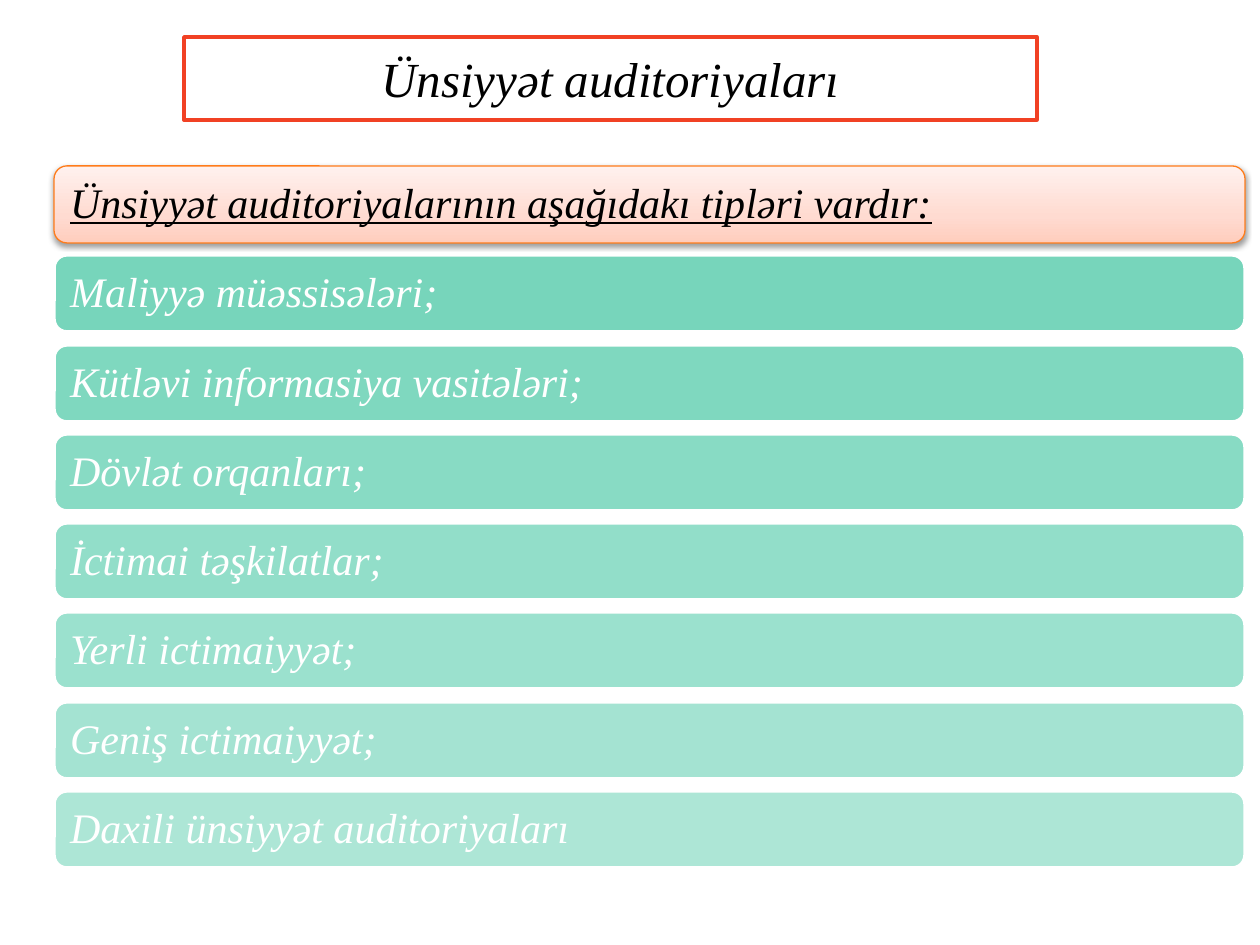
from lxml import etree
from pptx import Presentation
from pptx.dml.color import RGBColor
from pptx.enum.shapes import MSO_SHAPE
from pptx.enum.text import MSO_ANCHOR, PP_ALIGN
from pptx.oxml.ns import qn
from pptx.util import Pt

PX = 914400 / 126
RECT, ROUNDED = MSO_SHAPE.RECTANGLE, MSO_SHAPE.ROUNDED_RECTANGLE
TOP, MIDDLE = MSO_ANCHOR.TOP, MSO_ANCHOR.MIDDLE
LEFT, CENTER = PP_ALIGN.LEFT, PP_ALIGN.CENTER

WHITE = RGBColor(0xFF, 0xFF, 0xFF)
BLACK = RGBColor(0x00, 0x00, 0x00)
RED = RGBColor(0xF1, 0x41, 0x24)
ORANGE = RGBColor(0xFF, 0x7C, 0x1B)
GREEN = RGBColor(0x5D, 0xCE, 0xAF)
PEACH_STOPS = (
    (0, RGBColor(0xFF, 0xCD, 0xBD)),
    (35, RGBColor(0xFF, 0xDB, 0xD1)),
    (100, RGBColor(0xFF, 0xF1, 0xEE)),
)

TITLE = "Ünsiyyət auditoriyaları"
HEADING = "Ünsiyyət auditoriyalarının aşağıdakı tipləri vardır:"
AUDIENCES = (
    ("Maliyyə müəssisələri;", 84),
    ("Kütləvi informasiya vasitələri;", 79),
    ("Dövlət orqanları;", 73),
    ("İctimai təşkilatlar;", 67),
    ("Yerli ictimaiyyət;", 61),
    ("Geniş ictimaiyyət;", 56),
    ("Daxili ünsiyyət auditoriyaları", 50),
)
ROW_LEFT, ROW_TOP, ROW_WIDTH, ROW_HEIGHT = 54, 166, 1191, 77
ROW_PITCH = 625 / 7


def px(n):
    """Turn pixels into EMU."""
    return round(n * PX)


def add_color(parent, color, alpha=None):
    """Append an RGB colour, with an optional opacity in percent."""
    clr = etree.SubElement(parent, qn("a:srgbClr"), val=str(color))
    if alpha is not None:
        etree.SubElement(clr, qn("a:alpha"), val=str(alpha * 1000))


def add_box(slide, kind, box, line, width):
    """Add a white outlined shape without a shadow."""
    sp = slide.shapes.add_shape(kind, *map(px, box))
    sp.shadow.inherit = False
    sp.fill.solid()
    sp.fill.fore_color.rgb = WHITE
    sp.line.color.rgb = line
    sp.line.width = Pt(width)
    return sp


def write_text(sp, text, color, frame, paragraph, font):
    """Write one italic line with the given format values."""
    tf = sp.text_frame
    p = tf.paragraphs[0]
    r = p.add_run()
    r.text = text
    r.font.color.rgb = color
    font = {"name": "Times New Roman", "italic": True, **font}
    for obj, values in ((tf, frame), (p, paragraph), (r.font, font)):
        for name, value in values.items():
            setattr(obj, name, value)


def add_title(slide):
    """Add the framed slide title."""
    sp = add_box(slide, RECT, (184, 37, 853, 83), RED, 2)
    write_text(sp, TITLE, BLACK,
               {"vertical_anchor": TOP, "margin_top": px(11), "word_wrap": True},
               {"alignment": CENTER}, {"size": Pt(28)})


def add_row(slide, index, text, color, line, width, underline=False):
    """Add one bar of the list."""
    top = round(ROW_TOP + index * ROW_PITCH)
    sp = add_box(slide, ROUNDED, (ROW_LEFT, top, ROW_WIDTH, ROW_HEIGHT), line, width)
    frame = {"vertical_anchor": MIDDLE, "word_wrap": True}
    frame.update({f"margin_{side}": Pt(7.2) for side in ("left", "top", "right", "bottom")})
    write_text(sp, text, color, frame, {"alignment": LEFT, "line_spacing": 0.9},
               {"size": Pt(24), "underline": underline})
    return sp


def add_heading(slide):
    """Add the peach gradient bar with its soft shadow."""
    sp = add_row(slide, 0, HEADING, BLACK, ORANGE, 0.75, True)
    sp.fill.gradient()
    sp.fill.gradient_angle = 90
    spPr = sp._element.spPr
    stops = spPr.find(".//" + qn("a:gsLst"))
    for stop in list(stops):
        stops.remove(stop)
    for pos, color in PEACH_STOPS:
        add_color(etree.SubElement(stops, qn("a:gs"), pos=str(pos * 1000)), color)
    shadow = etree.SubElement(spPr.find(qn("a:effectLst")), qn("a:outerShdw"),
                              blurRad=str(Pt(3.1)), dist=str(Pt(1.6)),
                              dir="5400000", rotWithShape="0")
    add_color(shadow, BLACK, 38)


def add_audience(slide, index, text, opacity):
    """Add a translucent green bar."""
    sp = add_row(slide, index, text, WHITE, WHITE, 2)
    fill = sp._element.spPr.find(qn("a:solidFill"))
    fill.remove(fill[0])
    add_color(fill, GREEN, opacity)


def main():
    """Build and save the slide."""
    prs = Presentation()
    prs.slide_width, prs.slide_height = px(1260), px(945)
    slide = prs.slides.add_slide(prs.slide_layouts[6])
    add_title(slide)
    add_heading(slide)
    for index, (text, opacity) in enumerate(AUDIENCES, 1):
        add_audience(slide, index, text, opacity)
    prs.save("out.pptx")


if __name__ == "__main__":
    main()
